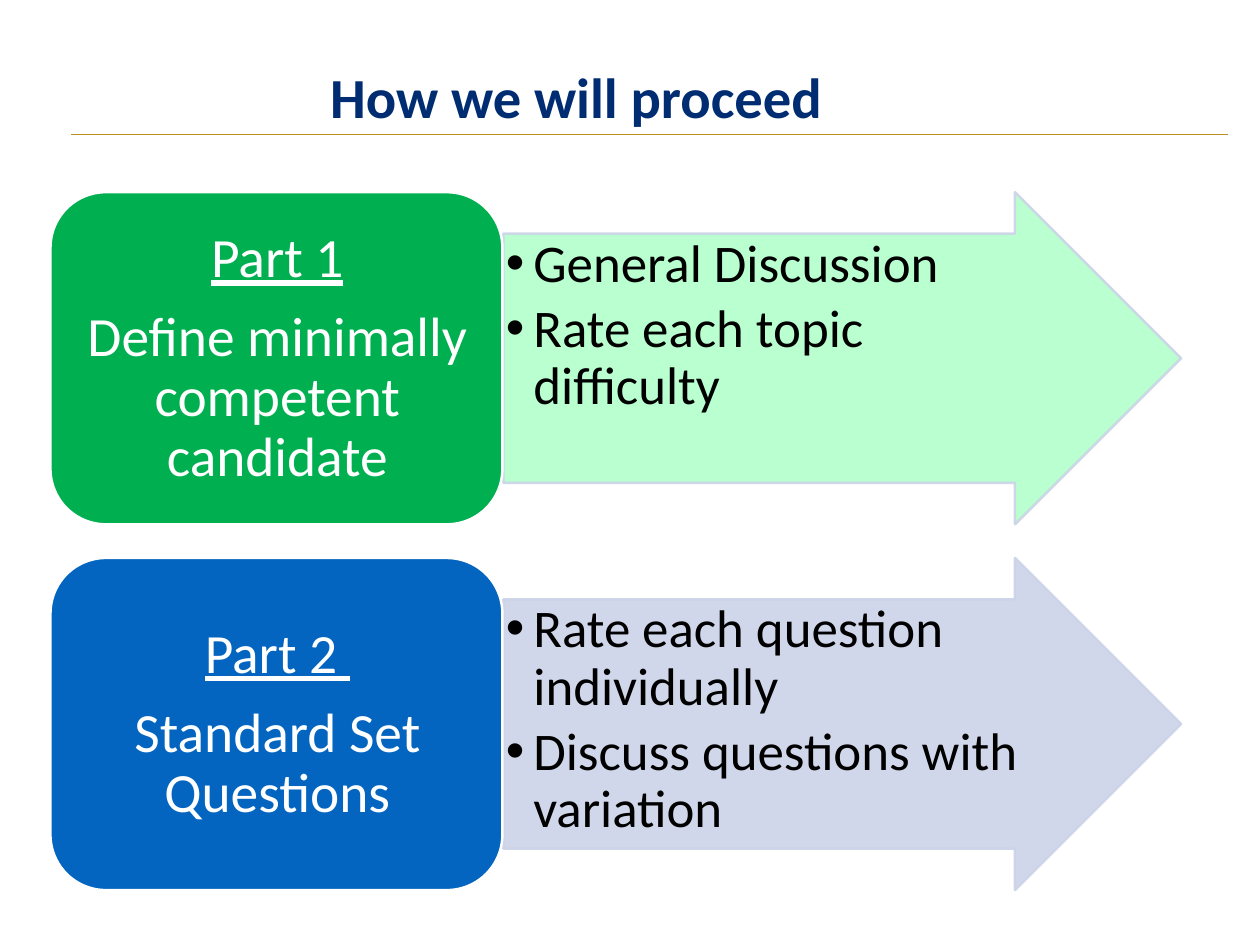
import pptx
import pptx.util
import pptx.dml.color
import pptx.enum.shapes
import pptx.enum.text
import pptx.oxml.ns
import lxml.etree

Inches = pptx.util.Inches
Pt = pptx.util.Pt
qn = pptx.oxml.ns.qn
SHAPE = pptx.enum.shapes.MSO_SHAPE
ANCHOR = pptx.enum.text.MSO_ANCHOR
ALIGN = pptx.enum.text.PP_ALIGN

TITLE = "How we will proceed"
PARTS = [
    {
        "label": ["Part 1", "Define minimally competent candidate"],
        "steps": ["General Discussion", "Rate each topic difficulty"],
        "box": "green",
        "arrow": "mint",
    },
    {
        "label": ["Part 2 ", "Standard Set Questions"],
        "steps": ["Rate each question individually", "Discuss questions with variation"],
        "box": "blue",
        "arrow": "lavender",
    },
]
COLOURS = {
    "navy": "002D72",
    "gold": "B88F20",
    "green": "00B050",
    "blue": "0365C0",
    "mint": "B2FFCA",
    "lavender": "CCD3E8",
    "white": "FFFFFF",
    "black": "000000",
}
FONT = "Calibri"
FIRST_TOP, ROW_STEP, ROW_HEIGHT = 2.17, 4.13, 3.75
BOX_LEFT, BOX_WIDTH = 0.57, 5.1
ARROW_LEFT, ARROW_WIDTH = 5.68, 7.65
BULLET_INDENT = 0.31


def colour(name):
    return pptx.dml.color.RGBColor.from_string(COLOURS[name])


def add_block(slide, kind, place, fill, line):
    shape = slide.shapes.add_shape(kind, *map(Inches, place))
    shape.shadow.inherit = False
    shape.fill.solid()
    shape.fill.fore_color.rgb = colour(fill)
    shape.line.color.rgb = colour(line)
    shape.line.width = Pt(2)
    return shape


def add_bullet(paragraph):
    properties = paragraph._p.get_or_add_pPr()
    properties.set("marL", str(Inches(BULLET_INDENT)))
    properties.set("indent", str(-Inches(BULLET_INDENT)))
    lxml.etree.SubElement(properties, qn("a:buFont")).set("typeface", "Arial")
    lxml.etree.SubElement(properties, qn("a:buChar")).set("char", "•")


def add_text(slide, place, lines, size, ink, anchor, align, margins=(0, 0),
             spacing=0.9, after=0, bullets=False):
    frame = slide.shapes.add_textbox(*map(Inches, place)).text_frame
    frame.word_wrap = True
    frame.vertical_anchor = anchor
    frame.margin_left = frame.margin_right = Inches(margins[0])
    frame.margin_top = frame.margin_bottom = Inches(margins[1])
    for index, line in enumerate(lines):
        paragraph = frame.add_paragraph() if index else frame.paragraphs[0]
        paragraph.text = line
        paragraph.alignment = align
        paragraph.line_spacing = spacing
        paragraph.space_after = Pt(after)
        if bullets:
            add_bullet(paragraph)
        paragraph.font.name = FONT
        paragraph.font.size = Pt(size)
        paragraph.font.color.rgb = colour(ink)
    return frame


def add_part(slide, part, top):
    arrow = add_block(slide, SHAPE.RIGHT_ARROW,
                      (ARROW_LEFT, top, ARROW_WIDTH, ROW_HEIGHT), part["arrow"], "lavender")
    arrow.adjustments[0] = 0.75
    arrow.adjustments[1] = 0.5
    for tint in arrow._element.spPr.iter(qn("a:srgbClr")):
        lxml.etree.SubElement(tint, qn("a:alpha")).set("val", "90000")
    add_text(slide, (ARROW_LEFT, top + 0.47, 6.25, 2.82), part["steps"], 43, "black",
             ANCHOR.TOP, ALIGN.LEFT, (0.03, 0.03), after=6.5, bullets=True)

    add_block(slide, SHAPE.ROUNDED_RECTANGLE,
              (BOX_LEFT, top, BOX_WIDTH, ROW_HEIGHT), part["box"], "white")
    label = add_text(slide, (BOX_LEFT + 0.19, top + 0.19, 4.74, 3.39), part["label"], 45,
                     "white", ANCHOR.MIDDLE, ALIGN.CENTER, (0.19, 0.09), after=15.75)
    label.paragraphs[0].runs[0].font.underline = True


def main():
    presentation = pptx.Presentation()
    presentation.slide_width = Inches(14.22)
    presentation.slide_height = Inches(10.67)
    slide = presentation.slides.add_slide(presentation.slide_layouts[6])

    rule = slide.shapes.add_connector(pptx.enum.shapes.MSO_CONNECTOR.STRAIGHT,
                                      *map(Inches, (0.8, 1.52, 13.86, 1.52)))
    rule.line.color.rgb = colour("gold")
    rule.line.width = Pt(1)
    lxml.etree.SubElement(rule._element.spPr, qn("a:effectLst"))

    title = add_text(slide, (0.78, -0.37, 11.44, 1.83), [TITLE], 46, "navy",
                     ANCHOR.BOTTOM, ALIGN.CENTER, spacing=0.8)
    title.paragraphs[0].font.bold = True

    for row, part in enumerate(PARTS):
        add_part(slide, part, FIRST_TOP + row * ROW_STEP)

    presentation.save("out.pptx")


if __name__ == "__main__":
    main()
